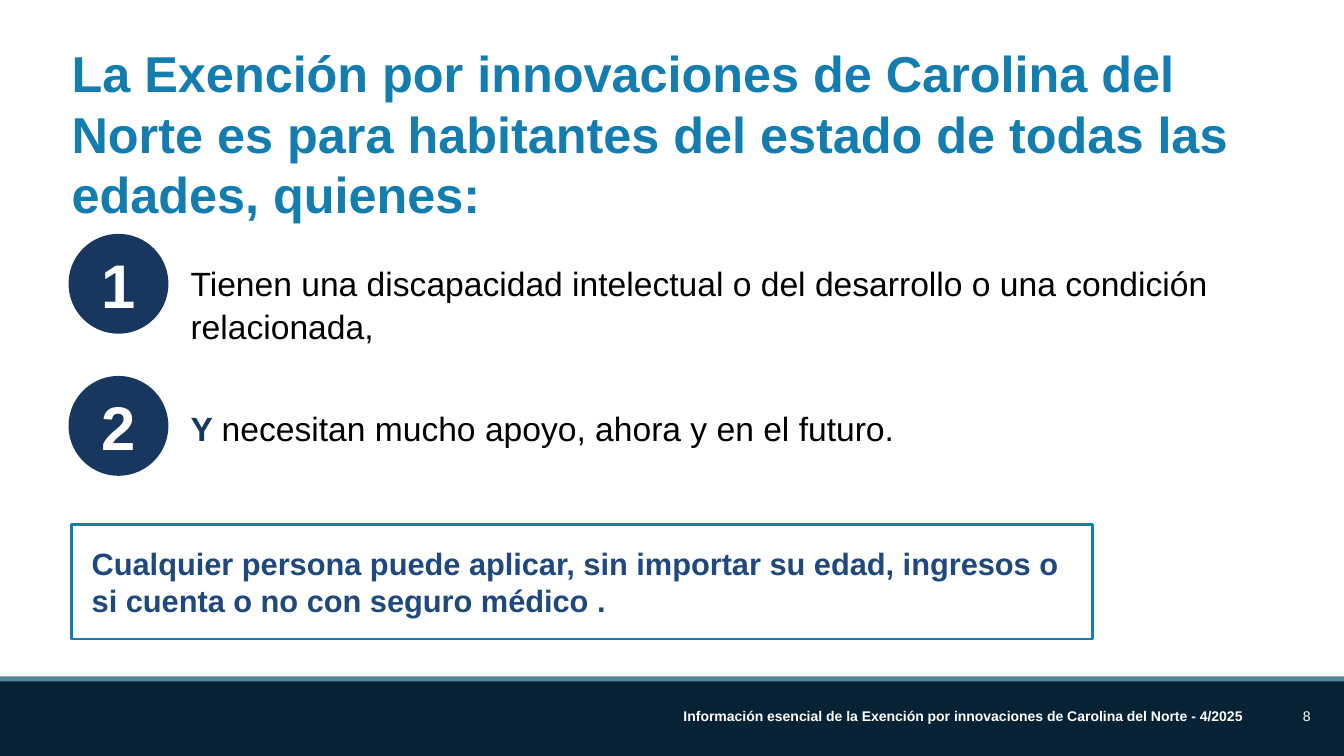
from pptx import Presentation
from pptx.dml.color import RGBColor
from pptx.enum.shapes import MSO_SHAPE as Shape
from pptx.enum.text import MSO_ANCHOR as Anchor, PP_ALIGN as Align
from pptx.util import Inches, Pt

WHITE = RGBColor(0xFF, 0xFF, 0xFF)
BLACK = RGBColor(0x00, 0x00, 0x00)
BLUE = RGBColor(0x14, 0x7D, 0xAF)
NAVY = RGBColor(0x17, 0x37, 0x5E)
INDIGO = RGBColor(0x1F, 0x49, 0x7D)
STRIPE = RGBColor(0x52, 0x84, 0x9C)
FOOTER = RGBColor(0x07, 0x22, 0x35)

PAGE_WIDTH, PAGE_HEIGHT = 13.33, 7.5


def write(shape, spans, size, align=Align.LEFT, anchor=Anchor.TOP,
          margins=(0, 0, 0, 0), spacing=None):
    """Fill a shape with one paragraph of (text, colour, bold) spans."""
    frame = shape.text_frame
    frame.word_wrap = True
    frame.vertical_anchor = anchor
    (frame.margin_left, frame.margin_top,
     frame.margin_right, frame.margin_bottom) = map(Inches, margins)
    para = frame.paragraphs[0]
    para.alignment = align
    if spacing:
        para.line_spacing = Pt(spacing)
    for text, color, bold in spans:
        span = para.add_run()
        span.text = text
        span.font.name = "Arial"
        span.font.size = Pt(size)
        span.font.bold = bold
        span.font.color.rgb = color


def add_text(page, box, spans, size, **layout):
    write(page.shapes.add_textbox(*map(Inches, box)), spans, size, **layout)


def add_figure(page, kind, box, fill=None, line=None):
    shape = page.shapes.add_shape(kind, *map(Inches, box))
    shape.shadow.inherit = False
    if fill is None:
        shape.fill.background()
    else:
        shape.fill.solid()
        shape.fill.fore_color.rgb = fill
    if line is None:
        shape.line.fill.background()
    else:
        shape.line.color.rgb = line
        shape.line.width = Pt(2)
    return shape


def add_footer(page, box):
    left, top, width, height = box
    stripe = 0.05
    add_figure(page, Shape.RECTANGLE, box, STRIPE)
    add_figure(page, Shape.RECTANGLE,
               (left, top + stripe, width, height - stripe), FOOTER)
    add_text(page, (left + width - 1.83, top + 0.19, 1.5, 0.4),
             [("8", WHITE, False)], 10, align=Align.RIGHT, anchor=Anchor.MIDDLE)
    add_text(page, (left + 5.68, top + 0.26, 6.74, 0.27),
             [("Información esencial de la Exención por innovaciones de "
               "Carolina del Norte - 4/2025", WHITE, True)],
             10, align=Align.RIGHT, margins=(0.1, 0.05, 0.1, 0.05))


def add_requirement(page, box, number, spans, text_drop):
    """Place a numbered disc with its text, lowered by text_drop."""
    left, top, width, height = box
    disc = add_figure(page, Shape.OVAL, (left, top, height, height), NAVY)
    write(disc, [(str(number), WHITE, True)], 44, align=Align.CENTER,
          anchor=Anchor.MIDDLE, margins=(0.1, 0.05, 0.1, 0.05))
    indent = 1.21
    add_text(page, (left + indent, top + text_drop, width - indent, 0.84),
             spans, 24, spacing=30.8)


def add_callout(page, box):
    frame = add_figure(page, Shape.RECTANGLE, box, line=BLUE)
    write(frame, [("Cualquier persona puede aplicar, sin importar su edad, "
                   "ingresos o si cuenta o no con seguro médico .",
                   INDIGO, True)], 22, margins=(0.2, 0.2, 0.1, 0.2))


def main():
    deck = Presentation()
    deck.slide_width = Inches(PAGE_WIDTH)
    deck.slide_height = Inches(PAGE_HEIGHT)
    page = deck.slides.add_slide(deck.slide_layouts[6])

    add_footer(page, (0, 6.71, PAGE_WIDTH, 0.79))
    add_text(page, (0.71, 0.42, 12.39, 1.82),
             [("La Exención por innovaciones de Carolina del Norte es para "
               "habitantes del estado de todas las edades, quienes:",
               BLUE, True)], 36, spacing=43.2)
    requirements = [
        ([("Tienen una discapacidad intelectual o del desarrollo o una "
           "condición relacionada,", BLACK, False)], 0.26),
        ([("Y ", NAVY, True),
          ("necesitan mucho apoyo, ahora y en el futuro.", BLACK, False)], 0.29),
    ]
    for index, (spans, text_drop) in enumerate(requirements):
        add_requirement(page, (0.68, 2.32 + 1.41 * index, 11.87, 0.99),
                        index + 1, spans, text_drop)
    add_callout(page, (0.71, 5.2, 10.13, 1.14))

    deck.save("out.pptx")


if __name__ == "__main__":
    main()
